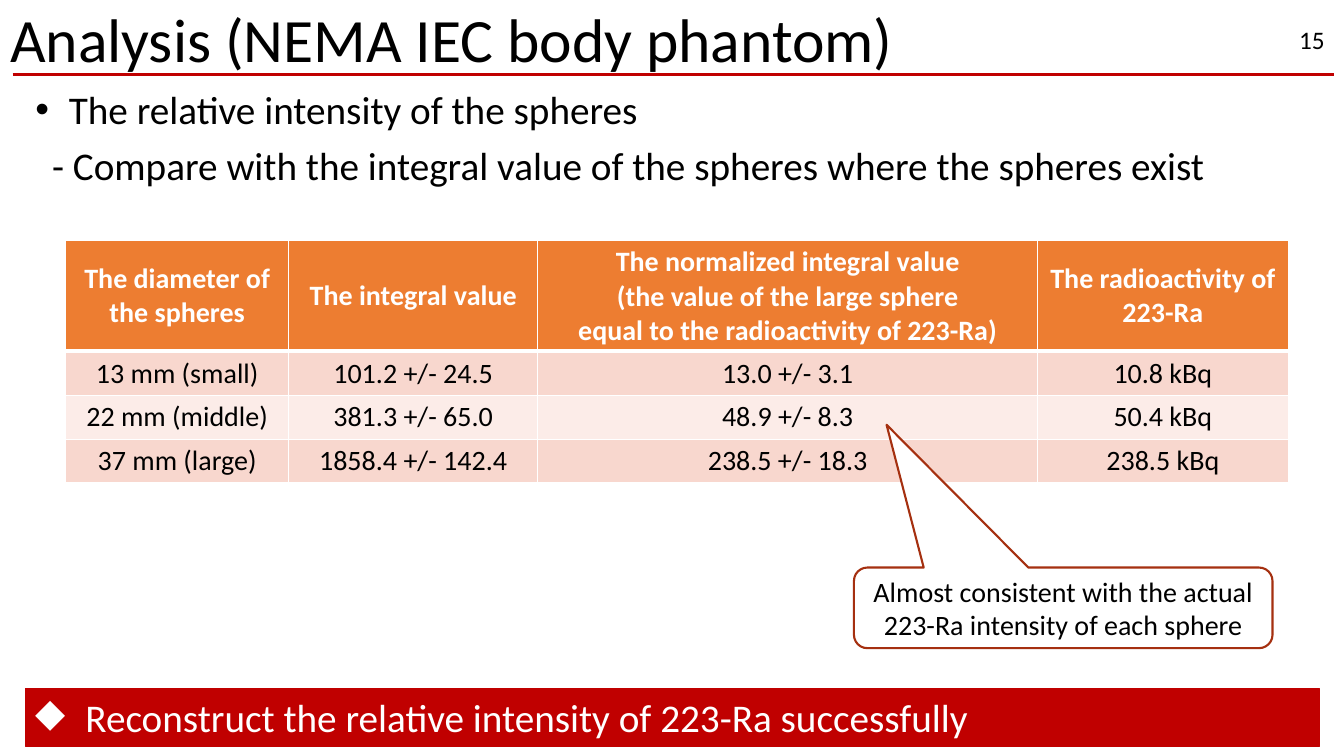
import pptx
import pptx.util
import pptx.dml.color
import pptx.enum.shapes
import pptx.enum.text
import pptx.oxml
import pptx.oxml.ns
import lxml.etree

Pt = pptx.util.Pt
Align = pptx.enum.text.PP_ALIGN
Anchor = pptx.enum.text.MSO_ANCHOR
Kind = pptx.enum.shapes.MSO_SHAPE
qn = pptx.oxml.ns.qn

FONT = "Calibri"
HUES = {"text": "000000", "white": "FFFFFF", "red": "C00000", "rust": "A53010",
        "head": "ED7D31", "odd": "F8D7CE", "even": "FCECE8"}

TITLE = "Analysis (NEMA IEC body phantom)"
NUMBER = "15"
# text, left margin, first-line indent, bullet
POINTS = [
    ("The relative intensity of the spheres", 24, -24, "•"),
    ("- Compare with the integral value of the spheres where the spheres exist",
     12, 0, None),
]
ROWS = [
    ["The diameter of the spheres",
     "The integral value",
     "The normalized integral value\n(the value of the large sphere\n"
     "equal to the radioactivity of 223-Ra)",
     "The radioactivity of 223-Ra"],
    ["13 mm (small)", "101.2 +/- 24.5", "13.0 +/- 3.1", "10.8 kBq"],
    ["22 mm (middle)", "381.3 +/- 65.0", "48.9 +/- 8.3", "50.4 kBq"],
    ["37 mm (large)", "1858.4 +/- 142.4", "238.5 +/- 18.3", "238.5 kBq"],
]
NOTE = "Almost consistent with the actual 223-Ra intensity of each sphere"
RESULT = "Reconstruct the relative intensity of 223-Ra successfully"

WIDTHS = [159.2, 178, 357, 179]
HEAD, ROW = 79.4, 31.4
TABLE = (47, 171.5)


def hue(name):
    return pptx.dml.color.RGBColor.from_string(HUES[name])


def box(*lengths):
    return [Pt(x) for x in lengths]


def style(para, size, color="text", align=Align.LEFT, bold=False):
    para.alignment = align
    font = para.font
    font.name, font.size, font.bold = FONT, Pt(size), bold
    font.color.rgb = hue(color)


def bullet(para, left, indent, mark):
    props = para._p.get_or_add_pPr()
    props.set("marL", str(Pt(left)))
    props.set("indent", str(Pt(indent)))
    tag = "a:buChar" if mark else "a:buNone"
    item = pptx.oxml.ns.nsdecls("a")
    item = pptx.oxml.parse_xml(f"<{tag} {item}/>")
    if mark:
        item.set("char", mark)
    props.insert_element_before(item, "a:tabLst", "a:defRPr", "a:extLst")


def place(shape, left, top, width, height):
    shape.left, shape.top, shape.width, shape.height = box(left, top, width, height)
    shape.text_frame.auto_size = pptx.enum.text.MSO_AUTO_SIZE.NONE


def panel(slide, kind, area, fill, line, weight):
    shape = slide.shapes.add_shape(kind, *box(*area))
    shape.shadow.inherit = False
    shape.fill.solid()
    shape.fill.fore_color.rgb = hue(fill)
    shape.line.color.rgb = hue(line)
    shape.line.width = Pt(weight)
    return shape


def border(cell, base):
    """Draw white cell edges, with the bottom one at width base."""
    props = cell._tc.get_or_add_tcPr()
    for i, (side, wide) in enumerate(zip("LRTB", (1, 1, 1, base))):
        edge = lxml.etree.Element(qn("a:ln" + side), w=str(Pt(wide)))
        fill = lxml.etree.SubElement(edge, qn("a:solidFill"))
        lxml.etree.SubElement(fill, qn("a:srgbClr"), val=HUES["white"])
        props.insert(i, edge)


def add_grid(slide):
    high = HEAD + ROW * (len(ROWS) - 1)
    frame = slide.shapes.add_table(len(ROWS), len(WIDTHS),
                                   *box(*TABLE, sum(WIDTHS), high))
    grid = frame.table
    for col, wide in zip(grid.columns, WIDTHS):
        col.width = Pt(wide)
    for r, row in enumerate(ROWS):
        top = r == 0
        grid.rows[r].height = Pt(HEAD if top else ROW)
        for c, text in enumerate(row):
            cell = grid.cell(r, c)
            cell.text = text
            cell.vertical_anchor = Anchor.MIDDLE
            cell.fill.solid()
            cell.fill.fore_color.rgb = hue("head" if top else "odd" if r % 2 else "even")
            border(cell, 3 if top else 1)
            for para in cell.text_frame.paragraphs:
                style(para, 20, "white" if top else "text", Align.CENTER, top)


def main():
    deck = pptx.Presentation()
    deck.slide_width, deck.slide_height = box(960, 540)
    slide = deck.slides.add_slide(deck.slide_layouts[1])

    title, body = slide.placeholders
    place(title, 0, 0, 960, 61)
    title.text_frame.text = TITLE
    title.text_frame.vertical_anchor = Anchor.MIDDLE
    para = title.text_frame.paragraphs[0]
    style(para, 44)
    para.line_spacing = 0.9

    place(body, 18, 61, 942, 422)
    body.text_frame.text = "\n".join(point[0] for point in POINTS)
    for para, (_, left, indent, mark) in zip(body.text_frame.paragraphs, POINTS):
        style(para, 28)
        para.line_spacing = 0.9
        para.space_before = Pt(10)
        bullet(para, left, indent, mark)

    banner = panel(slide, Kind.RECTANGLE, (18, 492, 924.5, 41), "red", "red", 0.75)
    banner.text_frame.text = RESULT
    banner.text_frame.vertical_anchor = Anchor.TOP
    style(banner.text_frame.paragraphs[0], 28, "white")
    bullet(banner.text_frame.paragraphs[0], 36, -36, "◆")

    rule = slide.shapes.add_connector(pptx.enum.shapes.MSO_CONNECTOR.STRAIGHT,
                                      *box(9, 53.3, 953, 53.3))
    rule.line.color.rgb = hue("red")
    rule.line.width = Pt(2.25)
    lxml.etree.SubElement(rule._element.spPr, qn("a:effectLst"))

    number = slide.shapes.add_textbox(*box(920, 13.7, 34, 29))
    number.text_frame.word_wrap = True
    number.text_frame.text = NUMBER
    style(number.text_frame.paragraphs[0], 18, align=Align.CENTER)

    add_grid(slide)

    note = panel(slide, Kind.ROUNDED_RECTANGULAR_CALLOUT, (610, 405.4, 299, 57.6),
                 "white", "rust", 1.5)
    for i, share in enumerate((-0.422, -2.271, 0.167)):
        note.adjustments[i] = share
    note.text_frame.text = NOTE
    note.text_frame.vertical_anchor = Anchor.MIDDLE
    style(note.text_frame.paragraphs[0], 20, align=Align.CENTER)

    deck.save("out.pptx")


if __name__ == "__main__":
    main()
